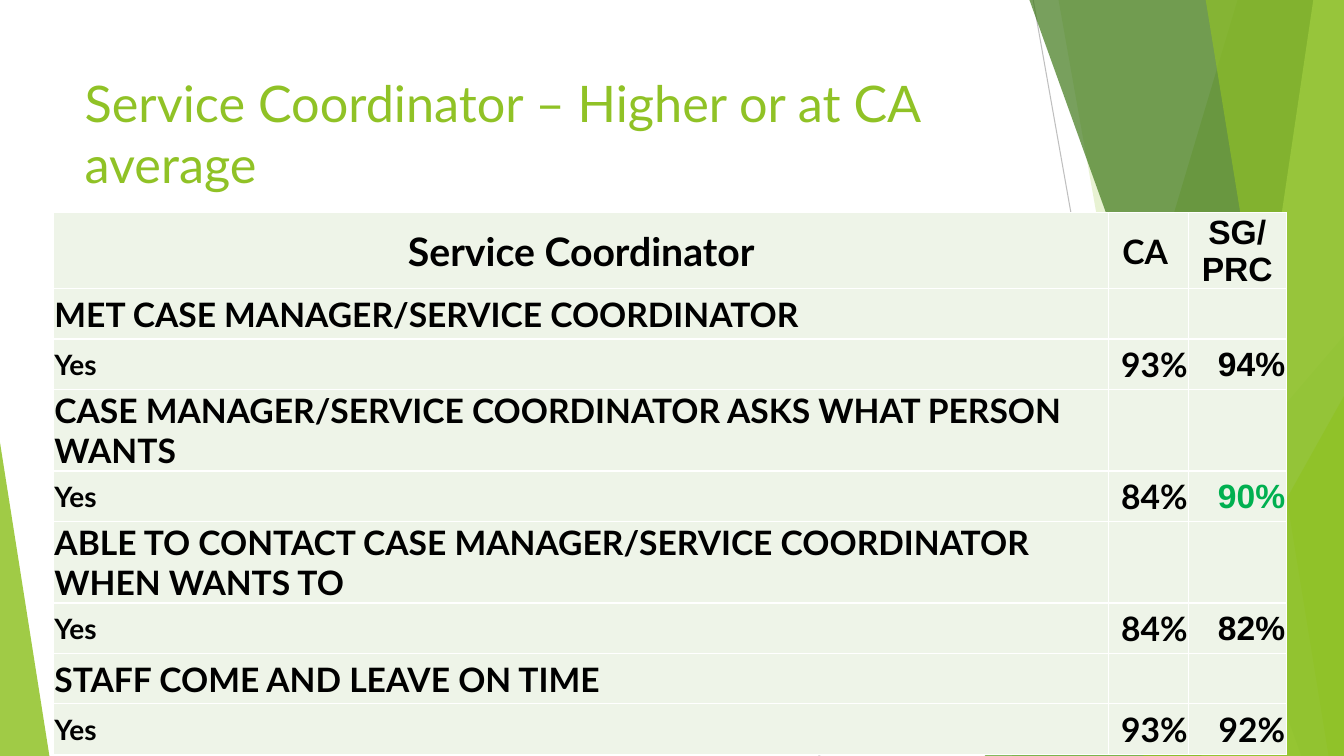
from dataclasses import dataclass

from lxml.etree import SubElement
from pptx import Presentation
from pptx.dml.color import RGBColor
from pptx.enum.shapes import MSO_CONNECTOR, MSO_SHAPE
from pptx.enum.text import MSO_ANCHOR, MSO_AUTO_SIZE, PP_ALIGN
from pptx.oxml.ns import qn
from pptx.util import Pt

WIDTH, HEIGHT = 960, 540
BAND_TOP = -0.72
GREEN, BLACK, CELL_FILL, BORDER = "90C226", "000000", "EEF4E8", "FFFFFF"


@dataclass
class Ray:
    start: tuple[float, float]
    end: tuple[float, float]
    color: str


@dataclass
class Band:
    """Four-sided band reaching the right edge of the slide."""
    top_x: float
    bottom_x: float
    color: str
    alpha: int


@dataclass
class Wedge:
    """Triangle standing on the bottom edge of the slide."""
    left: float
    top: float
    width: float
    apex: float
    color: str
    alpha: int


@dataclass
class Question:
    heading: str
    ca: str
    prc: str
    prc_font: str = "Arial"
    prc_color: str = BLACK
    heading_height: float = 36


RAYS = [
    Ray((738, 0), (833.8, HEIGHT), "BFBFBF"),
    Ray((WIDTH, 290), (584.6, HEIGHT), "D9D9D9"),
]
FACETS = [
    Band(884.2, 722.9, GREEN, 30),
    Band(756, 851.8, GREEN, 20),
    Wedge(703.4, 239.8, 256.6, 1, "54A021", 72),
    Band(735.1, 929.5, "3F7819", 70),
    Band(938.2, 858.2, "C0E474", 70),
    Band(861.1, 949, GREEN, 65),
    Wedge(816.5, 283, 143.5, 1, GREEN, 80),
    Wedge(0, 316.1, 35.3, 0, GREEN, 85),
]
QUESTIONS = [
    Question("MET CASE MANAGER/SERVICE COORDINATOR", "93%", "94%"),
    Question("CASE MANAGER/SERVICE COORDINATOR ASKS WHAT PERSON WANTS",
             "84%", "90%", prc_color="00B050"),
    Question("ABLE TO CONTACT CASE MANAGER/SERVICE COORDINATOR WHEN WANTS TO",
             "84%", "82%", heading_height=42.5),
    Question("STAFF COME AND LEAVE ON TIME", "93%", "92%", prc_font="Lato"),
]
COLUMNS = [753.8, 56.9, 69.8]
HEADER_HEIGHT, ANSWER_HEIGHT = 46.8, 36


def rgb(color: str) -> RGBColor:
    return RGBColor.from_string(color)


def write(tf, text: str, *, size: float = 24, font: str = "Lato",
          color: str = BLACK, bold: bool = True, align=PP_ALIGN.LEFT) -> None:
    p = tf.paragraphs[0]
    p.alignment = align
    r = p.add_run()
    r.text = text
    r.font.size, r.font.name, r.font.bold = Pt(size), font, bold
    r.font.color.rgb = rgb(color)


def draw_ray(s, ray: Ray) -> None:
    line = s.shapes.add_connector(MSO_CONNECTOR.STRAIGHT,
                                  *map(Pt, ray.start + ray.end))
    line.line.color.rgb = rgb(ray.color)
    line.line.width = Pt(0.75)
    SubElement(line.element.spPr, qn("a:effectLst"))


def draw_facet(s, facet: Band | Wedge) -> None:
    if isinstance(facet, Band):
        builder = s.shapes.build_freeform(Pt(facet.top_x), Pt(BAND_TOP))
        corners = [(WIDTH, BAND_TOP), (WIDTH, HEIGHT), (facet.bottom_x, HEIGHT)]
        builder.add_line_segments([(Pt(x), Pt(y)) for x, y in corners])
        sp = builder.convert_to_shape()
    else:
        sp = s.shapes.add_shape(
            MSO_SHAPE.ISOSCELES_TRIANGLE, Pt(facet.left), Pt(facet.top),
            Pt(facet.width), Pt(HEIGHT - facet.top))
        sp.adjustments[0] = facet.apex
    sp.shadow.inherit = False
    sp.line.fill.background()
    sp.fill.solid()
    sp.fill.fore_color.rgb = rgb(facet.color)
    solid = sp.element.spPr.find(qn("a:solidFill"))
    SubElement(solid[0], qn("a:alpha"), val=str(facet.alpha * 1000))


def format_cell(cell) -> None:
    cell.margin_left = cell.margin_right = cell.margin_top = Pt(0.7)
    cell.margin_bottom = Pt(0)
    cell.vertical_anchor = MSO_ANCHOR.MIDDLE
    # Borders precede the fill in the cell properties
    props = cell.fill and cell._tc.get_or_add_tcPr()
    for side in ("lnL", "lnR", "lnT", "lnB"):
        ln = SubElement(props, qn(f"a:{side}"), w=str(Pt(1)))
        solid = SubElement(ln, qn("a:solidFill"))
        SubElement(solid, qn("a:srgbClr"), val=BORDER)
    cell.fill.solid()
    cell.fill.fore_color.rgb = rgb(CELL_FILL)


def draw_table(s) -> None:
    heights = [HEADER_HEIGHT]
    for q in QUESTIONS:
        heights += [q.heading_height, ANSWER_HEIGHT]
    table = s.shapes.add_table(len(heights), len(COLUMNS), Pt(38.2), Pt(151.9),
                               Pt(sum(COLUMNS)), Pt(sum(heights))).table
    for column, width in zip(table.columns, COLUMNS):
        column.width = Pt(width)
    for row, height in zip(table.rows, heights):
        row.height = Pt(height)
    for cell in table.iter_cells():
        format_cell(cell)

    # Header row
    headers = [("Service Coordinator", 28, "Lato"), ("CA ", 24, "Lato"),
               ("SG/PRC", 24, "Arial")]
    for col, (text, size, font) in enumerate(headers):
        write(table.cell(0, col).text_frame, text, size=size, font=font,
              align=PP_ALIGN.CENTER)

    # A heading row and an answer row for each question
    for i, q in enumerate(QUESTIONS):
        row = 2 * i + 1
        write(table.cell(row, 0).text_frame, q.heading)
        write(table.cell(row + 1, 0).text_frame, "Yes", size=20)
        write(table.cell(row + 1, 1).text_frame, q.ca, align=PP_ALIGN.RIGHT)
        write(table.cell(row + 1, 2).text_frame, q.prc, font=q.prc_font,
              color=q.prc_color, align=PP_ALIGN.RIGHT)


def draw_title(s) -> None:
    title = s.shapes.title
    s.shapes.element.append(title.element)  # in front of the facets
    title.left, title.top = Pt(53.3), Pt(48.2)
    title.width, title.height = Pt(676.8), Pt(103.7)
    tf = title.text_frame
    tf.word_wrap = True
    tf.auto_size = MSO_AUTO_SIZE.NONE
    tf.vertical_anchor = MSO_ANCHOR.TOP
    write(tf, "Service Coordinator – Higher or at CA average", size=36,
          color=GREEN, bold=False)


def main() -> None:
    prs = Presentation()
    prs.slide_width, prs.slide_height = Pt(WIDTH), Pt(HEIGHT)
    s = prs.slides.add_slide(prs.slide_layouts[5])
    # Background decoration
    for ray in RAYS:
        draw_ray(s, ray)
    for facet in FACETS:
        draw_facet(s, facet)
    # Content
    draw_title(s)
    draw_table(s)
    prs.save("out.pptx")


if __name__ == "__main__":
    main()
